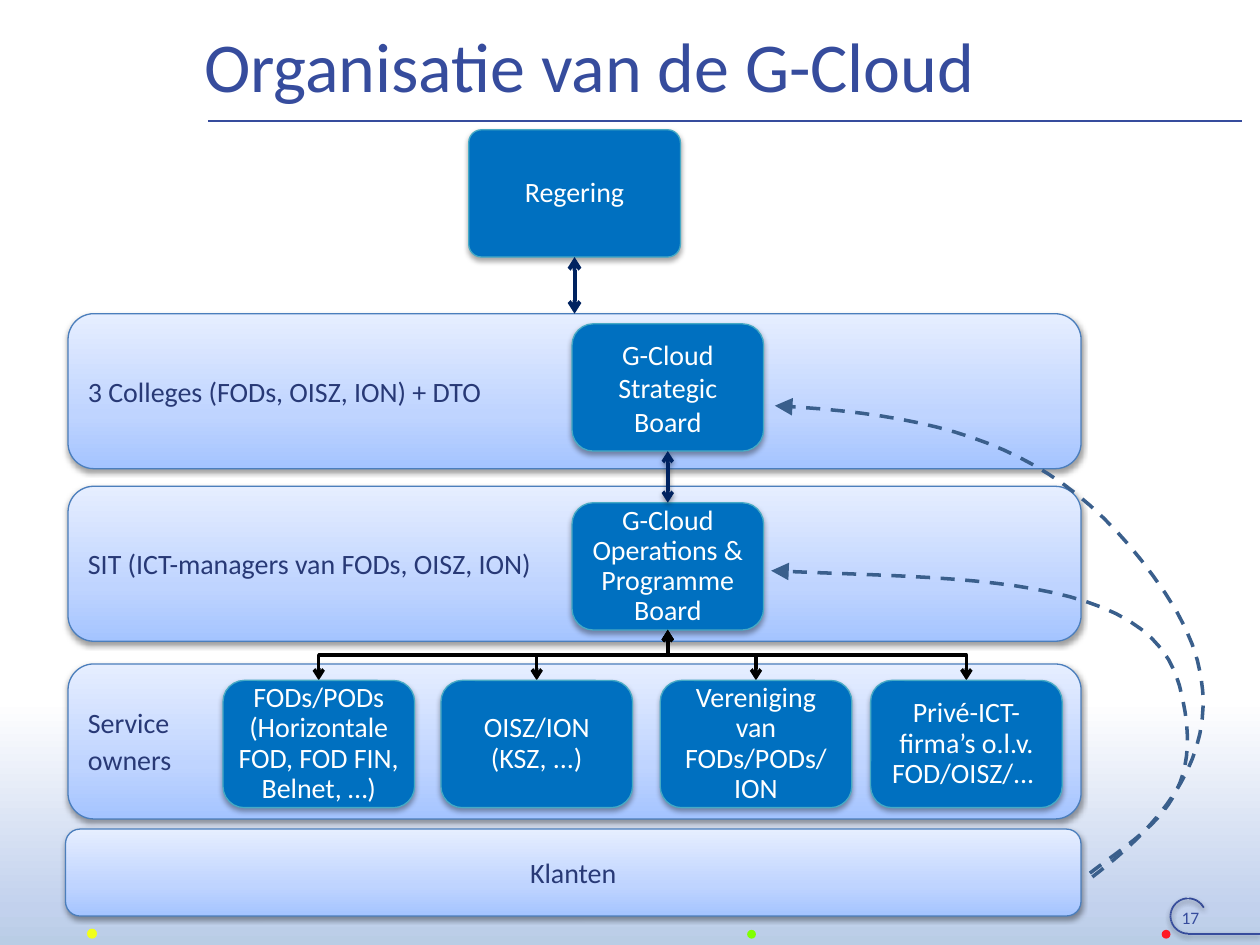
from dataclasses import dataclass
from itertools import pairwise
from math import cos, radians, sin

from lxml.etree import SubElement
from pptx import Presentation
from pptx.dml.color import RGBColor
from pptx.enum.dml import MSO_LINE_DASH_STYLE as Dash
from pptx.enum.shapes import MSO_CONNECTOR as Connector, MSO_SHAPE as Shape
from pptx.enum.text import MSO_ANCHOR as Anchor, PP_ALIGN as Align
from pptx.oxml.ns import qn
from pptx.util import Inches, Pt


@dataclass(frozen=True)
class Theme:
    """Colours, font and type sizes of the slide."""
    font: str = "Calibri"
    title_size: int = 40
    space_size: int = 18
    body_size: int = 16
    number_size: int = 10
    brand: str = "364C9D"
    band_text: str = "283976"
    band_line: str = "4B7EBC"
    box: str = "0070C0"
    box_line: str = "46AAC5"
    white: str = "FFFFFF"
    link: str = "002360"
    branch: str = "000000"
    feedback: str = "3A5F8C"
    red: str = "FF1A26"
    green: str = "80FF00"
    yellow: str = "F2FF1A"
    band_stops: tuple = ((0, "A4C4FF"), (35, "BFD4FF"), (100, "E6EEFF"))
    sky_stops: tuple = ((0, "B9CDE5"), (15, "C2D1ED"), (100, "FFFFFF"))


THEME = Theme()


def rgb(value):
    """Turn a hex string into a colour."""
    return RGBColor.from_string(value)


def set_line(line, color, width):
    """Give a line its colour and width in points."""
    line.color.rgb = rgb(color)
    line.width = Pt(width)


def add_shadow(shape, alpha, distance):
    """Give a shape a soft black shadow straight below it."""
    effects = shape._element.spPr.find(qn("a:effectLst"))
    shadow = SubElement(effects, qn("a:outerShdw"), blurRad=str(Pt(3.1)),
                        dist=str(Pt(distance)), dir="5400000", rotWithShape="0")
    color = SubElement(shadow, qn("a:srgbClr"), val="000000")
    SubElement(color, qn("a:alpha"), val=str(alpha * 1000))


def add_ends(line_owner, size="med", **ends):
    """Put arrowheads on a line, named by headEnd and tailEnd."""
    line = line_owner._element.spPr.find(qn("a:ln"))
    for end, kind in ends.items():
        SubElement(line, qn(f"a:{end}"), type=kind, w=size, len=size)


def fill_gradient(shape, stops):
    """Fill a shape with colour stops that run from bottom to top."""
    shape.fill.gradient()
    shape.fill.gradient_angle = 90
    stop_list = shape._element.spPr.find(qn("a:gradFill")).find(qn("a:gsLst"))
    for old in list(stop_list):
        stop_list.remove(old)
    for position, color in stops:
        stop = SubElement(stop_list, qn("a:gs"), pos=str(position * 1000))
        SubElement(stop, qn("a:srgbClr"), val=color)


def add_preset(page, kind, left, top, width, height):
    """Add a preset shape without shadow or outline."""
    shape = page.shapes.add_shape(kind, Inches(left), Inches(top), Inches(width), Inches(height))
    shape.shadow.inherit = False
    shape.line.fill.background()
    return shape


def write(shape, text, size, color, align=Align.LEFT, spacing=None, insets=(0.1, 0.05, 0.1, 0.05)):
    """Write one paragraph per line of a tuple into a shape."""
    frame = shape.text_frame
    frame.word_wrap = True
    frame.margin_left, frame.margin_top, frame.margin_right, frame.margin_bottom = map(Inches, insets)
    for index, words in enumerate(text):
        para = frame.add_paragraph() if index else frame.paragraphs[0]
        para.text = words
        para.alignment = align
        if spacing:
            para.line_spacing = spacing
        para.font.name = THEME.font
        para.font.size = Pt(size)
        para.font.color.rgb = rgb(color)
    return frame


def add_label(page, text, size, place, insets, anchor):
    """Add a text box in the brand colour."""
    box = page.shapes.add_textbox(*map(Inches, place))
    write(box, (text,), size, THEME.brand, insets=insets).vertical_anchor = anchor


def add_band(page, place, text, align=Align.LEFT):
    """Add a wide, light organisation layer."""
    band = add_preset(page, Shape.ROUNDED_RECTANGLE, *place)
    fill_gradient(band, THEME.band_stops)
    set_line(band.line, THEME.band_line, 0.75)
    add_shadow(band, 38, 1.6)
    write(band, text, THEME.body_size, THEME.band_text, align).vertical_anchor = Anchor.MIDDLE
    return band


def add_box(page, left, top, text, width=1.52, spacing=0.9, side=0.1):
    """Add a blue box that names one body."""
    box = add_preset(page, Shape.ROUNDED_RECTANGLE, left, top, width, 1.01)
    box.fill.solid()
    box.fill.fore_color.rgb = rgb(THEME.box)
    set_line(box.line, THEME.box_line, 0.75)
    add_shadow(box, 35, 1.8)
    frame = write(box, (text,), THEME.body_size, THEME.white, Align.CENTER, spacing,
                  (side, 0.1, side, 0.1))
    frame.vertical_anchor = Anchor.MIDDLE
    return box


def add_rule(page, start, end, color, width):
    """Add a straight connector without shadow."""
    rule = page.shapes.add_connector(Connector.STRAIGHT, *map(Inches, start + end))
    set_line(rule.line, color, width)
    SubElement(rule._element.spPr, qn("a:effectLst"))
    return rule


def add_link(page, upper, lower, width):
    """Join two shapes with a vertical two-way arrow."""
    link = add_rule(page, (0, 0), (1, 1), THEME.link, width)
    link.begin_connect(upper, 2)
    link.end_connect(lower, 0)
    add_ends(link, headEnd="arrow", tailEnd="arrow")
    return link


def add_trace(page, points, color, width):
    """Add an open outline through points."""
    start, *rest = [(Inches(x), Inches(y)) for x, y in points]
    builder = page.shapes.build_freeform(*start)
    builder.add_line_segments(rest, close=False)
    trace = builder.convert_to_shape()
    trace.shadow.inherit = False
    trace.fill.background()
    set_line(trace.line, color, width)
    return trace


def bezier(start, first, second, end, steps=24):
    """List points on a cubic curve, without its start."""
    points = []
    for step in range(1, steps + 1):
        t = step / steps
        weights = ((1 - t) ** 3, 3 * t * (1 - t) ** 2, 3 * t * t * (1 - t), t ** 3)
        points.append(tuple(sum(weight * point[axis] for weight, point in
                                zip(weights, (start, first, second, end))) for axis in (0, 1)))
    return points


def add_feedback(page, start, *controls):
    """Add a dashed curve of two cubic parts that ends in an arrowhead."""
    points = [start] + bezier(start, *controls[:3]) + bezier(*controls[2:])
    curve = add_trace(page, points, THEME.feedback, 2)
    curve.line.dash_style = Dash.DASH
    add_ends(curve, "lg", tailEnd="triangle")


def add_badge(page, steps=37):
    """Add the open ring around the page number and its foot line."""
    badge = page.shapes.add_group_shape()
    angles = [radians(-28 - 242 * step / steps) for step in range(steps + 1)]
    points = [(9.43 + 0.14 * cos(angle), 7.27 + 0.14 * sin(angle)) for angle in angles]
    for start, end in pairwise(points + [(10, 7.41)]):
        add_shadow(add_rule(badge, start, end, THEME.brand, 1), 38, 1.6)


def add_decoration(page):
    """Add the sky, the title rule, the dots and the page number badge."""
    fill_gradient(add_preset(page, Shape.RECTANGLE, 0, 5.56, 10, 1.94), THEME.sky_stops)
    add_rule(page, (1.65, 0.96), (9.86, 0.96), THEME.brand, 1.5)
    for left, top, size, color in ((9.22, 7.38, 0.07, THEME.red), (5.93, 7.38, 0.07, THEME.green),
                                   (0.69, 7.37, 0.08, THEME.yellow)):
        dot = add_preset(page, Shape.OVAL, left, top, size, size)
        dot.fill.solid()
        dot.fill.fore_color.rgb = rgb(color)
    add_badge(page)


def main():
    """Build the slide and save the deck."""
    deck = Presentation()
    deck.slide_width, deck.slide_height = Inches(10), Inches(7.5)
    page = deck.slides.add_slide(deck.slide_layouts[6])
    add_decoration(page)
    colleges = add_band(page, (0.54, 2.49, 8.04, 1.23), ("3 Colleges (FODs, OISZ, ION) + DTO",))
    add_band(page, (0.54, 3.86, 8.04, 1.23), ("SIT (ICT-managers van FODs, OISZ, ION)",))
    service = add_band(page, (0.54, 5.27, 8.04, 1.23), ("Service", "owners"))
    span = service.text_frame.paragraphs[1].add_run()
    span.text, span.font.size = " ", Pt(THEME.space_size)
    add_label(page, "Organisatie van de G-Cloud", THEME.title_size, (1.62, 0.15, 8.24, 0.72),
              (0, 0.05, 0.1, 0.05), Anchor.MIDDLE)
    government = add_box(page, 3.72, 1.03, "Regering", width=1.68)
    government.adjustments[0] = 0.1
    strategic = add_box(page, 4.54, 2.57, "G-Cloud Strategic Board", spacing=None)
    operations = add_box(page, 4.54, 3.99, "G-Cloud Operations & Programme Board")
    owners = ((1.77, "FODs/PODs\n(Horizontale FOD, FOD FIN, Belnet, …)", 0),
              (3.5, "OISZ/ION (KSZ, ...)", 0.1),
              (5.24, "Vereniging van FODs/PODs/ ION", 0.1),
              (6.91, "Privé-ICT-firma’s o.l.v. FOD/OISZ/... ", 0.1))
    for left, text, side in owners:
        center = left + 0.76
        branch = add_trace(page, [(5.3, 5), (5.3, 5.2), (center, 5.2), (center, 5.4)], THEME.branch, 2)
        add_ends(branch, headEnd="arrow", tailEnd="arrow")
        add_box(page, left, 5.4, text, side=side)
    add_label(page, "17", THEME.number_size, (9.28, 7.15, 0.53, 0.24), (0.1, 0.05, 0.04, 0), Anchor.TOP)
    add_shadow(add_link(page, strategic, operations, 2), 38, 1.6)
    add_link(page, government, colleges, 2.25)
    add_band(page, (0.52, 6.58, 8.06, 0.69), ("Klanten",), Align.CENTER)
    add_feedback(page, (8.65, 6.93), (9.12, 6.57), (9.6, 6.34), (9.36, 5.44),
                 (9.12, 4.54), (7.6, 4.6), (6.12, 4.53))
    add_feedback(page, (8.67, 6.96), (9.14, 6.6), (10.01, 5.83), (9.25, 4.71),
                 (8.49, 3.58), (7.62, 3.3), (6.15, 3.22))
    deck.save("out.pptx")


if __name__ == "__main__":
    main()
